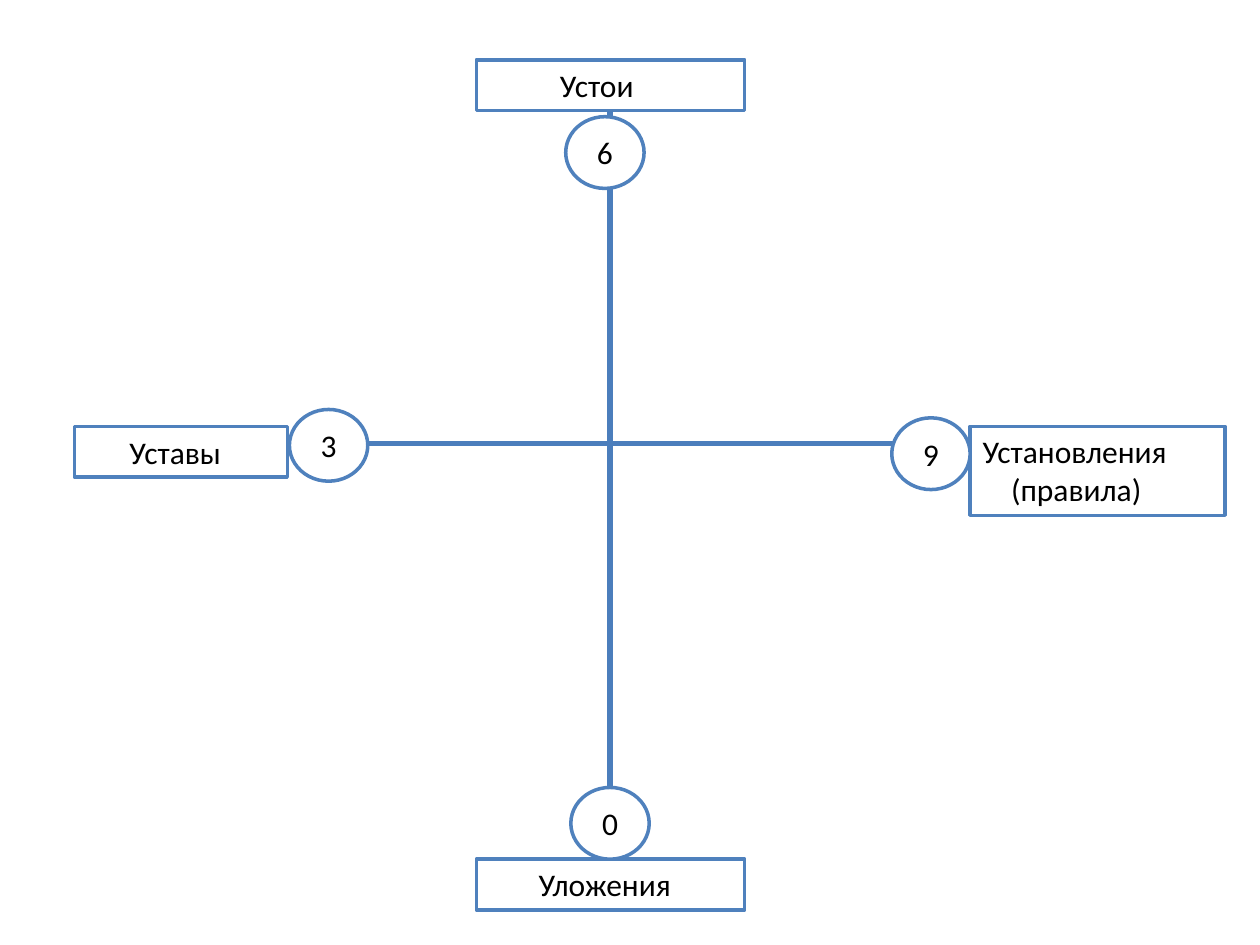
"""Build a cross diagram with four numbered ends and their labels."""
from dataclasses import dataclass

from lxml import etree
from pptx import Presentation
from pptx.dml.color import RGBColor
from pptx.enum.shapes import MSO_CONNECTOR, MSO_SHAPE
from pptx.enum.text import MSO_ANCHOR, PP_ALIGN
from pptx.oxml.ns import qn
from pptx.util import Pt

RECTANGLE = MSO_SHAPE.RECTANGLE
OVAL = MSO_SHAPE.OVAL
STRAIGHT = MSO_CONNECTOR.STRAIGHT
TOP = MSO_ANCHOR.TOP
LEFT = PP_ALIGN.LEFT
CENTER = PP_ALIGN.CENTER

BORDER = "4F81BD"
AXIS_COLOR = "4B7EBC"
WHITE = "FFFFFF"
BLACK = "000000"
BLANK_LAYOUT = 6
CIRCLE_WIDTH = 44.8
CIRCLE_HEIGHT = 41


@dataclass(frozen=True)
class Line:
    """Hold one line of label text and its left indent."""
    text: str
    indent: float = 0


@dataclass(frozen=True)
class Label:
    """Hold the frame and the text lines of a label box."""
    left: float
    top: float
    width: float
    height: float
    lines: tuple[Line, ...]


@dataclass(frozen=True)
class Circle:
    """Hold the place and the digit of a numbered circle."""
    left: float
    top: float
    digit: str


@dataclass(frozen=True)
class Axis:
    """Hold the end points of an axis."""
    start_x: float
    start_y: float
    end_x: float
    end_y: float


LABELS = (
    Label(272.2, 34.2, 153.4, 29, (Line("Устои", 40.7),)),
    Label(554.4, 243.6, 145.6, 50.9, (Line("Установления"), Line("(правила)", 16.3))),
    Label(272.2, 491, 153.4, 29, (Line("Уложения", 28.5),)),
    Label(42.5, 243.6, 121.7, 29, (Line("Уставы", 24.4),)),
)
AXES = (
    Axis(348.6, 63.2, 348.6, 491),
    Axis(180, 253.6, 548, 253.6),
)
CIRCLES = (
    Circle(509.6, 238.8, "9"),
    Circle(323.3, 66.7, "6"),
    Circle(165.4, 234, "3"),
    Circle(326.2, 450, "0"),
)


def color(value: str) -> RGBColor:
    """Turn a hex string into a colour."""
    return RGBColor.from_string(value)


def draw_box(page, preset, left: float, top: float, width: float, height: float,
             lines: tuple[Line, ...], alignment) -> None:
    """Draw an outlined white shape with its lines of text."""
    box = page.shapes.add_shape(preset, Pt(left), Pt(top), Pt(width), Pt(height))
    box.shadow.inherit = False
    box.fill.solid()
    box.fill.fore_color.rgb = color(WHITE)
    box.line.color.rgb = color(BORDER)
    box.line.width = Pt(2)
    frame = box.text_frame
    frame.word_wrap = True
    frame.vertical_anchor = TOP
    for index, line in enumerate(lines):
        para = frame.add_paragraph() if index else frame.paragraphs[0]
        para.alignment = alignment
        if line.indent:
            para._p.get_or_add_pPr().set("marL", str(Pt(line.indent)))
        span = para.add_run()
        span.text = line.text
        span.font.name = "Calibri"
        span.font.size = Pt(18)
        span.font.color.rgb = color(BLACK)


def draw_label(page, label: Label) -> None:
    """Draw a label box."""
    draw_box(page, RECTANGLE, label.left, label.top, label.width, label.height,
             label.lines, LEFT)


def draw_circle(page, circle: Circle) -> None:
    """Draw a numbered circle."""
    draw_box(page, OVAL, circle.left, circle.top, CIRCLE_WIDTH, CIRCLE_HEIGHT,
             (Line(circle.digit),), CENTER)


def draw_axis(page, axis: Axis) -> None:
    """Draw an axis without a shadow."""
    connector = page.shapes.add_connector(
        STRAIGHT, Pt(axis.start_x), Pt(axis.start_y), Pt(axis.end_x), Pt(axis.end_y))
    connector.line.color.rgb = color(AXIS_COLOR)
    connector.line.width = Pt(3)
    etree.SubElement(connector._element.spPr, qn("a:effectLst"))


def main() -> None:
    """Build and save the deck."""
    deck = Presentation()
    deck.slide_width = Pt(720)
    deck.slide_height = Pt(540)
    page = deck.slides.add_slide(deck.slide_layouts[BLANK_LAYOUT])
    for label in LABELS:
        draw_label(page, label)
    for axis in AXES:
        draw_axis(page, axis)
    for circle in CIRCLES:
        draw_circle(page, circle)
    deck.save("out.pptx")


if __name__ == "__main__":
    main()
